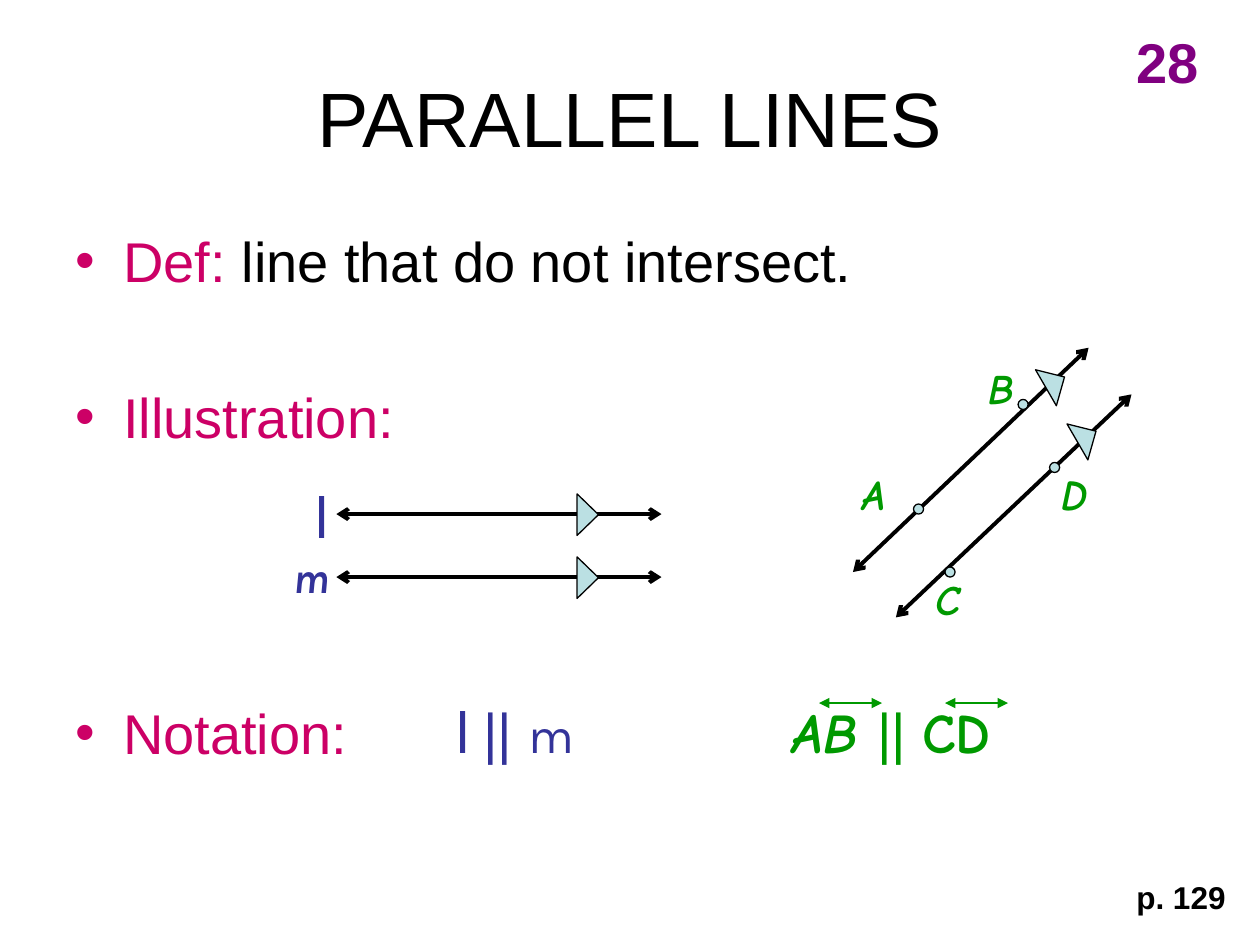
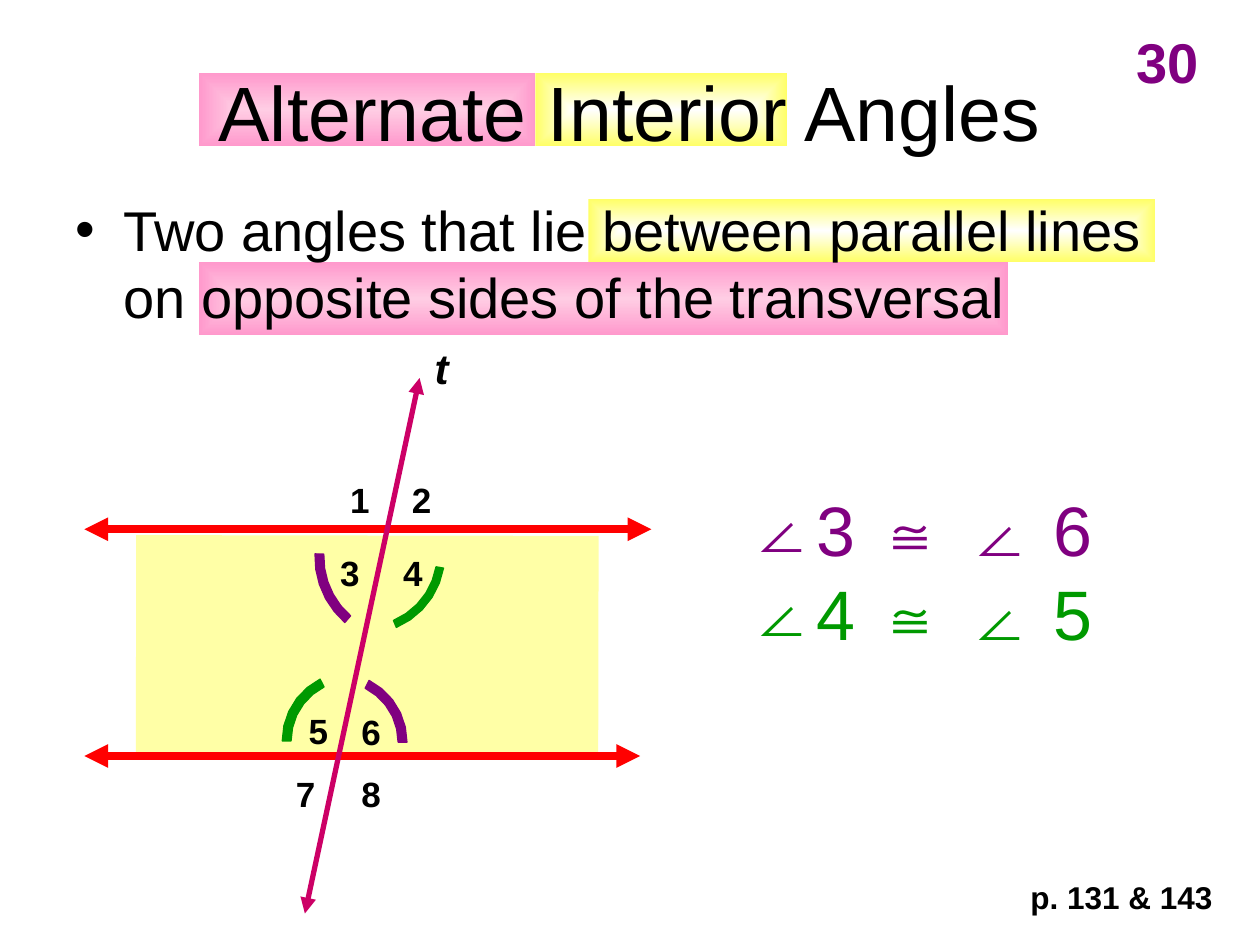
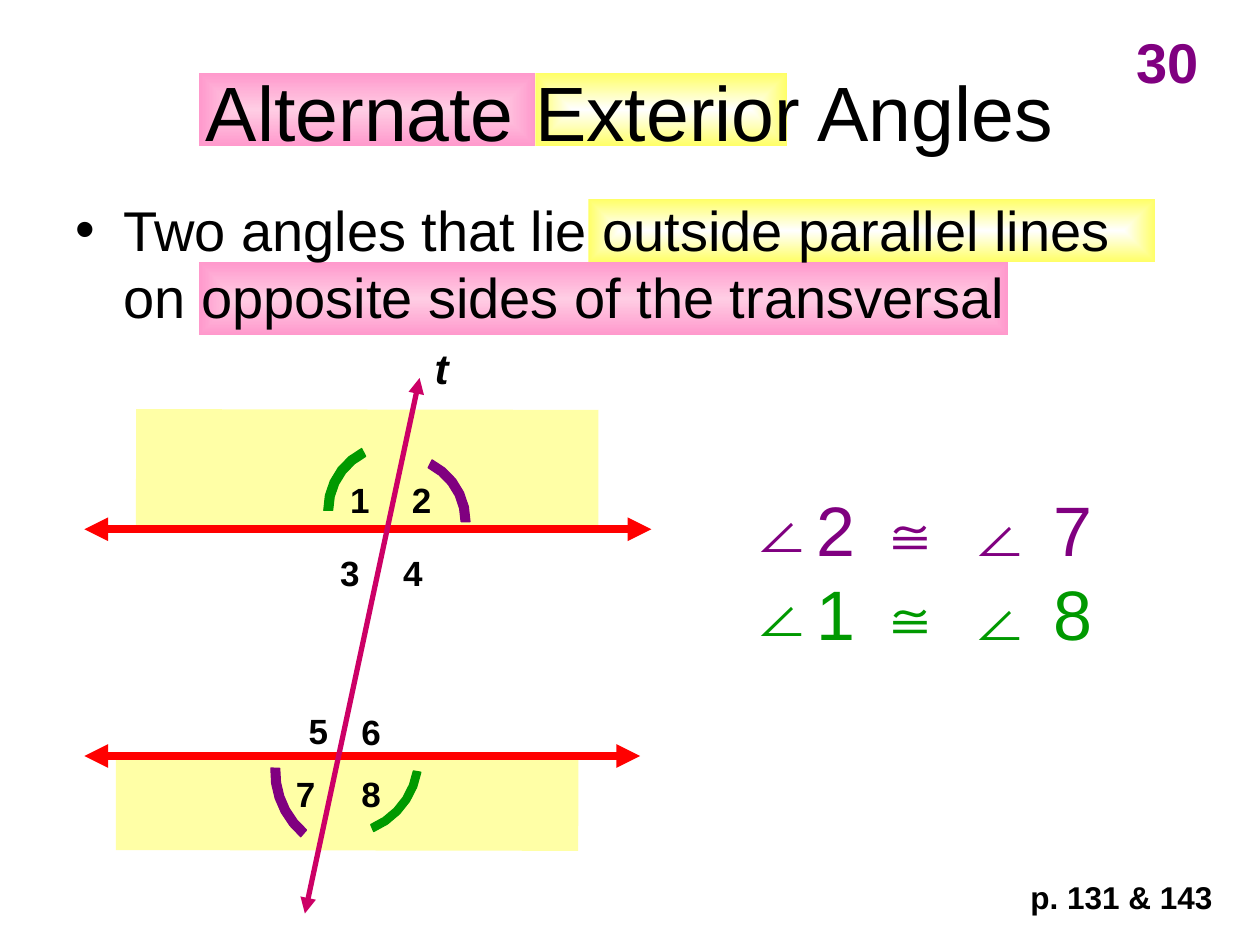
"""Build three geometry note slides on parallel lines and alternate angles."""
import math

import pptx
import pptx.dml.color
import pptx.enum.shapes
import pptx.enum.text
import pptx.oxml
import pptx.oxml.ns
import pptx.util
from lxml import etree

Inches = pptx.util.Inches
Pt = pptx.util.Pt
RGB = pptx.dml.color.RGBColor.from_string
SHAPES = pptx.enum.shapes.MSO_SHAPE
qn = pptx.oxml.ns.qn

COLORS = {
    "black": "000000", "crimson": "CC0066", "red": "FF0000", "purple": "800080",
    "green": "009900", "indigo": "333399", "ice": "BBE0E3", "band": "FFFF4F",
    "pink": "FF99CC", "pink core": "FFCDE4", "yellow": "FFFF66", "yellow core": "FFFFFF",
}
TITLE = {"name": "Arial", "size": Pt(44)}
BODY = {"name": "Arial", "size": Pt(32)}
CARD_NUMBER = {**BODY, "bold": True}
PAGE_REF = {"name": "Arial", "size": Pt(18), "bold": True}
ANGLE_NUMBER = {"name": "Arial", "size": Pt(20), "bold": True}
TRANSVERSAL = {"name": "Arial", "size": Pt(24), "bold": True, "italic": True}
CONGRUENCE = {"name": "Arial", "size": Pt(40)}
POINT = {"name": "Comic Neue", "size": Pt(24), "bold": True, "italic": True}
LINE_L = {"name": "Roboto", "size": Pt(32)}
LINE_M = {"name": "Karla", "size": Pt(24), "bold": True, "italic": True}
SEGMENT = {**POINT, "size": Pt(32)}


def add_text(slide, box, lines, bullet=None, indent=0, inset=0.05, wrap=True):
    """Add a text box of (space before, runs) lines, a run being text, colour, format."""
    frame = slide.shapes.add_textbox(*map(Inches, box)).text_frame
    frame.word_wrap = wrap
    frame.margin_top = Inches(inset)
    for index, (before, runs) in enumerate(lines):
        paragraph = frame.add_paragraph() if index else frame.paragraphs[0]
        if bullet:
            properties = paragraph._p.get_or_add_pPr()
            properties.set("marL", str(Inches(indent)))
            properties.set("indent", str(-Inches(indent)))
            etree.SubElement(properties, qn("a:buFont")).set("typeface", "Arial")
            etree.SubElement(properties, qn("a:buChar")).set("char", bullet)
        if before:
            paragraph.space_before = Pt(before)
        for text, color, style in runs:
            run = paragraph.add_run()
            run.text = text
            run.font.color.rgb = RGB(COLORS[color])
            for attribute, value in style.items():
                setattr(run.font, attribute, value)


def add_arrow(slide, ends, color, width, head="triangle"):
    """Add a straight line with the same arrowhead at both ends."""
    arrow = slide.shapes.add_connector(
        pptx.enum.shapes.MSO_CONNECTOR.STRAIGHT, *map(Inches, ends))
    arrow.line.color.rgb = RGB(COLORS[color])
    arrow.line.width = Pt(width)
    for end in ("a:headEnd", "a:tailEnd"):
        etree.SubElement(arrow.line._get_or_add_ln(), qn(end)).set("type", head)
    etree.SubElement(arrow._element.spPr, qn("a:effectLst"))


deck = pptx.Presentation()
deck.slide_width, deck.slide_height = Inches(10), Inches(7.5)

cards = [
    ("PARALLEL LINES", 0.3, "28", "p. 129", (8.92, 0.91), []),
    ("Alternate Interior Angles", 0.25, "30", "p. 131 & 143", (8.08, 1.65),
     [(1.08, 4.25, 3.67, 1.75)]),
    ("Alternate Exterior Angles", 0.25, "30", "p. 131 & 143", (8.08, 1.65),
     [(0.92, 6, 3.67, 0.75), (1.08, 3.25, 3.67, 0.92)]),
]
highlights = [
    ("pink", (1.58, 2.08, 6.42, 0.58)), ("pink", (1.58, 0.58, 2.67, 0.58)),
    ("yellow", (4.25, 0.58, 2, 0.58)), ("yellow", (4.67, 1.58, 4.5, 0.5)),
]
slides = []
for heading, top, number, page, (page_left, page_width), regions in cards:
    slide = deck.slides.add_slide(deck.slide_layouts[5])
    slides.append(slide)
    for region in regions:
        band = slide.shapes.add_shape(SHAPES.RECTANGLE, *map(Inches, region))
        band.rotation = 0.1
        band.shadow.inherit = False
        band.line.fill.background()
        band.fill.solid()
        band.fill.fore_color.rgb = RGB(COLORS["band"])
        tint = band._element.spPr.find(".//" + qn("a:srgbClr"))
        etree.SubElement(tint, qn("a:alpha")).set("val", "50000")
    for color, area in highlights if regions else []:
        glow = slide.shapes.add_shape(SHAPES.RECTANGLE, *map(Inches, area))
        glow.shadow.inherit = False
        glow.line.fill.background()
        glow.fill.gradient()
        for stop, shade in zip(glow.fill.gradient_stops, (color + " core", color)):
            stop.color.rgb = RGB(COLORS[shade])
        gradient = glow._element.spPr.find(qn("a:gradFill"))
        gradient.remove(gradient.find(qn("a:lin")))
        spread = etree.SubElement(gradient, qn("a:path"))
        spread.set("path", "shape")
        center = etree.SubElement(spread, qn("a:fillToRect"))
        for side in "ltrb":
            center.set(side, "50000")
    title = slide.shapes.title
    slide.shapes._spTree.append(title._element)
    title.left, title.top, title.width, title.height = map(Inches, (0.5, top, 9, 1.25))
    title.text_frame.text = heading
    title.text_frame.vertical_anchor = pptx.enum.text.MSO_ANCHOR.MIDDLE
    title_line = title.text_frame.paragraphs[0]
    title_line.alignment = pptx.enum.text.PP_ALIGN.CENTER
    title_run = title_line.runs[0]
    title_run.font.color.rgb = RGB(COLORS["black"])
    for attribute, value in TITLE.items():
        setattr(title_run.font, attribute, value)
    add_text(slide, (page_left, 6.92, page_width, 0.4),
             [(0, [(page, "black", PAGE_REF)])], wrap=False)
    add_text(slide, (8.92, 0.17, 0.83, 0.63), [(0, [(number, "purple", CARD_NUMBER)])])

parallel, *angle_slides = slides
add_text(parallel, (0.5, 1.75, 9, 4.95), [
    (0, [("Def:", "crimson", BODY), (" line that do not intersect.", "black", BODY)]),
    (50.5, [("Illustration:", "crimson", BODY)]),
    (142, [("Notation:", "crimson", BODY)]),
], bullet="•", indent=0.38)
add_text(parallel, (3.52, 5.49, 2, 0.63), [(0, [
    ("l ", "indigo", LINE_L), ("|| ", "indigo", BODY),
    ("m", "indigo", {"name": "Karla", "size": Pt(28)})])])
add_text(parallel, (6.19, 5.49, 2.5, 0.63), [(0, [
    ("AB ", "green", SEGMENT), ("|| ", "green", BODY),
    ("CD", "green", {**SEGMENT, "italic": False})])])

for ends in [(2.67, 4.08, 5.25, 4.08), (2.67, 4.58, 5.25, 4.58),
             (6.77, 4.54, 8.64, 2.76), (7.11, 4.9, 8.98, 3.13)]:
    add_arrow(parallel, ends, "black", 2.25, "arrow")
for left in (6.5, 7.5):
    add_arrow(parallel, (left, 5.58, left + 0.5, 5.58), "green", 0.75)

marks = [(SHAPES.ISOSCELES_TRIANGLE, x, y, 0.33, 0.17, turn) for x, y, turn in
         [(4.5, 4, 90), (4.5, 4.5, 90), (8.21, 2.95, 59.9), (8.46, 3.38, 59.9)]]
marks += [(SHAPES.OVAL, x, y, 0.08, 0.08, 0) for x, y in
          [(7.25, 4), (8.08, 3.17), (7.5, 4.5), (8.33, 3.67)]]
for outline, left, top, width, height, turn in marks:
    mark = parallel.shapes.add_shape(outline, *map(Inches, (left, top, width, height)))
    mark.rotation = turn
    mark.shadow.inherit = False
    mark.fill.solid()
    mark.fill.fore_color.rgb = RGB(COLORS["ice"])
    mark.line.color.rgb = RGB(COLORS["black"])
    mark.line.width = Pt(0.75)

for name, box, color, style in [
    ("l", (2.4, 3.78, 0.43, 0.63), "indigo", LINE_L),
    ("m", (2.23, 4.33, 0.68, 0.5), "indigo", LINE_M),
    ("A", (6.75, 3.67, 0.68, 0.5), "green", POINT),
    ("B", (7.75, 2.83, 0.68, 0.5), "green", POINT),
    ("C", (7.33, 4.5, 0.68, 0.5), "green", POINT),
    ("D", (8.33, 3.67, 0.68, 0.5), "green", POINT),
]:
    add_text(parallel, box, [(0, [(name, color, style)])])

number_places = [(2.68, 3.75), (3.17, 3.75), (2.6, 4.33), (3.1, 4.33),
                 (2.35, 5.58), (2.77, 5.59), (2.25, 6.08), (2.77, 6.08)]
arc_sweeps = {
    "lower left": ("purple", 0.62, 0.69, 131, 182),
    "upper right": ("purple", 0.48, 0.55, -63, 0),
    "lower right": ("green", 0.57, 0.63, 10, 67),
    "upper left": ("green", 0.48, 0.55, 180, 243),
}
arc_steps = 5
angle_facts = [
    ("between", "3 ≅ ∠ 6", "4 ≅ ∠ 5",
     {"lower left": (3.19, 4.42), "upper right": (2.68, 5.89),
      "lower right": (2.9, 4.4), "upper left": (2.79, 5.88)}),
    ("outside", "2 ≅ ∠ 7", "1 ≅ ∠ 8",
     {"lower left": (2.84, 6.12), "upper right": (3.18, 4.14),
      "lower right": (2.72, 6.02), "upper left": (3.12, 4.05)}),
]
for slide, (where, purple_pair, green_pair, arc_centers) in zip(angle_slides, angle_facts):
    definition = (f"Two angles that lie {where} parallel lines "
                  "on opposite sides of the transversal")
    add_text(slide, (0.5, 1.5, 9, 4.95), [(0, [(definition, "black", BODY)])],
             bullet="•", indent=0.38)
    for right, height in ((5.17, 4.2), (5.08, 6)):
        add_arrow(slide, (0.67, height, right, height), "red", 4.5)
    add_text(slide, (3.35, 2.67, 0.31, 0.5), [(0, [("t", "black", TRANSVERSAL)])],
             wrap=False)
    add_text(slide, (5.83, 3.15, 3.42, 3.43),
             [(0, [(purple_pair, "purple", CONGRUENCE)]),
              (0, [(green_pair, "green", CONGRUENCE)])], bullet="∠", inset=0.71)
    for number, (left, top) in enumerate(number_places, start=1):
        add_text(slide, (left, top, 0.65, 0.66), [(0, [(str(number), "black", ANGLE_NUMBER)])])
    add_arrow(slide, (3.33, 3, 2.42, 7.25), "crimson", 3)
    for corner, (x, y) in arc_centers.items():
        color, inner, outer, start, end = arc_sweeps[corner]
        turns = [math.radians(start + (end - start) * step / arc_steps)
                 for step in range(arc_steps + 1)]
        rim = [(Inches(x + radius * math.cos(turn)), Inches(y + radius * math.sin(turn)))
               for radius, sweep in ((inner, turns), (outer, turns[::-1])) for turn in sweep]
        builder = slide.shapes.build_freeform(*rim[0])
        builder.add_line_segments(rim[1:], close=True)
        arc = builder.convert_to_shape()
        arc.shadow.inherit = False
        arc.fill.solid()
        arc.fill.fore_color.rgb = RGB(COLORS[color])
        arc.line.color.rgb = RGB(COLORS[color])
        arc.line.width = Pt(0.75)

deck.save("out.pptx")
